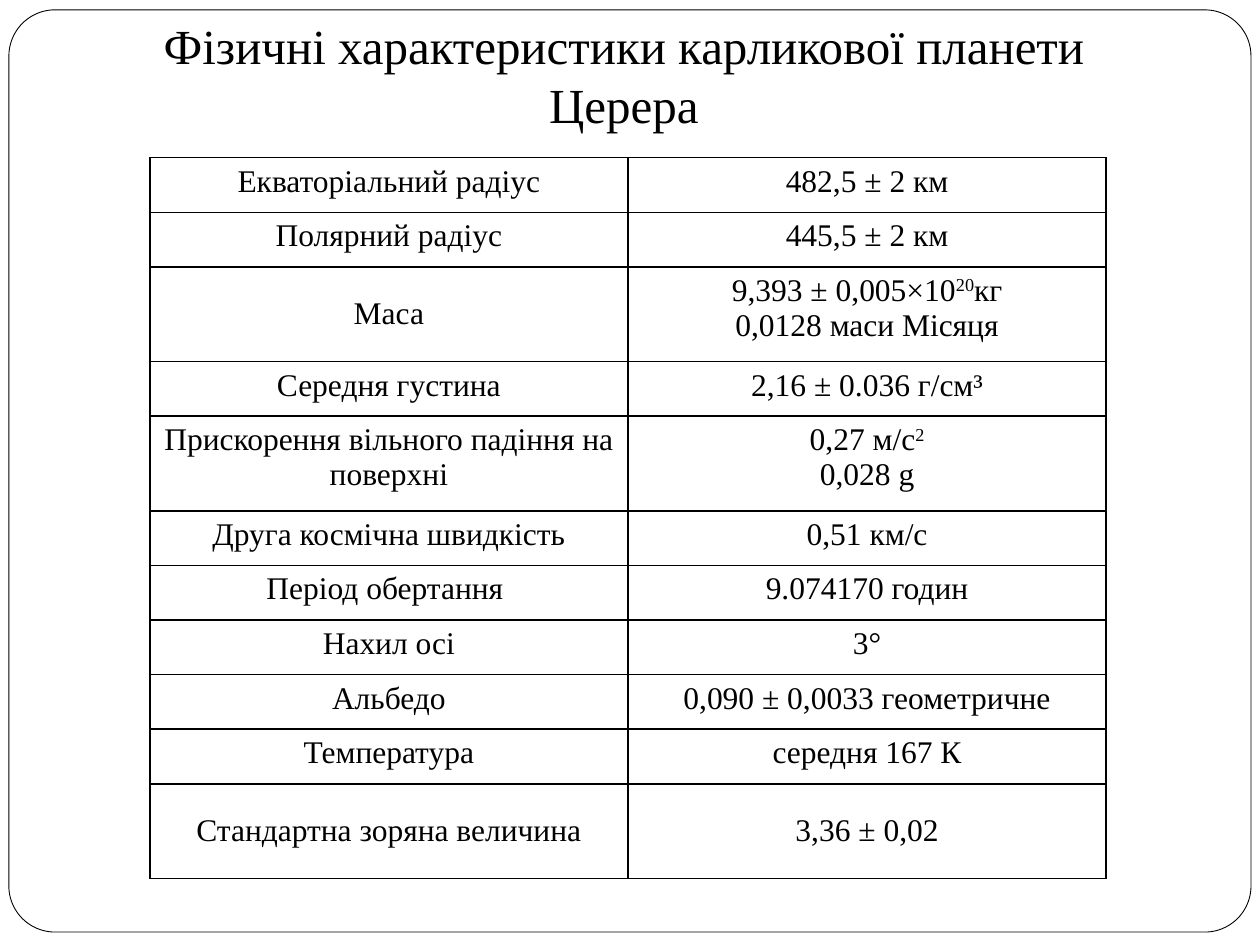
from dataclasses import dataclass

import lxml.etree
import pptx
import pptx.dml.color
import pptx.enum.shapes
import pptx.enum.text
import pptx.oxml.ns
import pptx.util

Cm, Pt = pptx.util.Cm, pptx.util.Pt
RGB = pptx.dml.color.RGBColor
Align, Anchor = pptx.enum.text.PP_ALIGN, pptx.enum.text.MSO_ANCHOR
qn = pptx.oxml.ns.qn


@dataclass(frozen=True)
class Theme:
    font: str = "Times New Roman"
    ink: str = "000000"
    paper: str = "FFFFFF"
    title_size: int = 28
    cell_size: int = 18
    frame_line: float = 0.5
    border: int = 1


@dataclass(frozen=True)
class Property:
    """One table row; ^ marks around digits raise them."""
    label: str
    value: str
    tall: bool = False
    label_anchor: Anchor = Anchor.TOP
    value_anchor: Anchor = Anchor.TOP


THEME = Theme()
TITLE = "Фізичні характеристики карликової планети Церера"
ROW_HEIGHT, TALL_HEIGHT, COLUMN_WIDTH = Cm(1.1), Cm(1.91), Cm(9.64)
PROPERTIES = [
    Property("Екваторіальний радіус", "482,5 ± 2 км"),
    Property("Полярний радіус", "445,5 ± 2 км"),
    Property("Маса", "9,393 ± 0,005×10^20^кг\n0,0128 маси Місяця", True, Anchor.MIDDLE),
    Property("Середня густина", "2,16 ± 0.036 г/см³"),
    Property("Прискорення вільного падіння на поверхні", "0,27 м/с^2^\n0,028 g", True),
    Property("Друга космічна швидкість", "0,51 км/с"),
    Property("Період обертання ", "9.074170 годин"),
    Property("Нахил осі", "3°"),
    Property("Альбедо", "0,090 ± 0,0033 геометричне"),
    Property("Температура", "середня 167 К"),
    Property("Стандартна зоряна величина", "3,36 ± 0,02", True, Anchor.MIDDLE, Anchor.MIDDLE),
]


def set_all(obj, values: dict) -> None:
    for name, value in values.items():
        setattr(obj, name, value)


def write(tf, text: str, size: int) -> None:
    """Write centred text, with line breaks and raised ^parts^."""
    p = tf.paragraphs[0]
    p.alignment = Align.CENTER
    for i, line in enumerate(text.split("\n")):
        if i:
            p.add_line_break()
        for j, part in enumerate(line.split("^")):
            if not part:
                continue
            r = p.add_run()
            r.text = part
            set_all(r.font, {"name": THEME.font, "size": Pt(size)})
            r.font.color.rgb = RGB.from_string(THEME.ink)
            if j % 2:
                r.font._element.set("baseline", "30000")


def add_frame(slide) -> None:
    sp = slide.shapes.add_shape(pptx.enum.shapes.MSO_SHAPE.ROUNDED_RECTANGLE,
                                Cm(0.18), Cm(0.2), Cm(25.04), Cm(18.59))
    sp.adjustments[0] = 0.05
    sp.shadow.inherit = False
    sp.fill.solid()
    sp.fill.fore_color.rgb = RGB.from_string(THEME.paper)
    sp.line.color.rgb = RGB.from_string(THEME.ink)
    sp.line.width = Pt(THEME.frame_line)
    slide.shapes._spTree.insert(2, sp._element)  # behind the title


def format_title(slide) -> None:
    title = slide.shapes.title
    set_all(title, {"left": Cm(2.11), "top": Cm(0.33), "width": Cm(20.93), "height": Cm(3.76)})
    tf = title.text_frame
    set_all(tf, {"word_wrap": True, "auto_size": pptx.enum.text.MSO_AUTO_SIZE.NONE,
                 "vertical_anchor": Anchor.BOTTOM, "margin_bottom": Cm(1.4)})
    write(tf, TITLE, THEME.title_size)


def format_cell(cell, text: str, anchor: Anchor) -> None:
    write(cell.text_frame, text, THEME.cell_size)
    cell.vertical_anchor = anchor
    tc_pr = cell._tc.get_or_add_tcPr()
    for side in ("a:lnL", "a:lnR", "a:lnT", "a:lnB"):
        ln = lxml.etree.SubElement(tc_pr, qn(side), w=str(Pt(THEME.border)))
        fill = lxml.etree.SubElement(ln, qn("a:solidFill"))
        lxml.etree.SubElement(fill, qn("a:srgbClr"), val=THEME.ink)
    cell.fill.solid()
    cell.fill.fore_color.rgb = RGB.from_string(THEME.paper)


def add_properties(slide, properties: list[Property]) -> None:
    heights = [TALL_HEIGHT if prop.tall else ROW_HEIGHT for prop in properties]
    table = slide.shapes.add_table(len(properties), 2, Cm(3.02), Cm(3.18),
                                   2 * COLUMN_WIDTH, sum(heights)).table
    set_all(table, {"first_row": False, "horz_banding": False})
    for i, (prop, height) in enumerate(zip(properties, heights)):
        table.rows[i].height = height
        format_cell(table.cell(i, 0), prop.label, prop.label_anchor)
        format_cell(table.cell(i, 1), prop.value, prop.value_anchor)


def main() -> None:
    prs = pptx.Presentation()
    set_all(prs, {"slide_width": Cm(25.4), "slide_height": Cm(19.05)})
    slide = prs.slides.add_slide(prs.slide_layouts[5])
    add_frame(slide)
    format_title(slide)
    add_properties(slide, PROPERTIES)
    prs.save("out.pptx")


if __name__ == "__main__":
    main()
